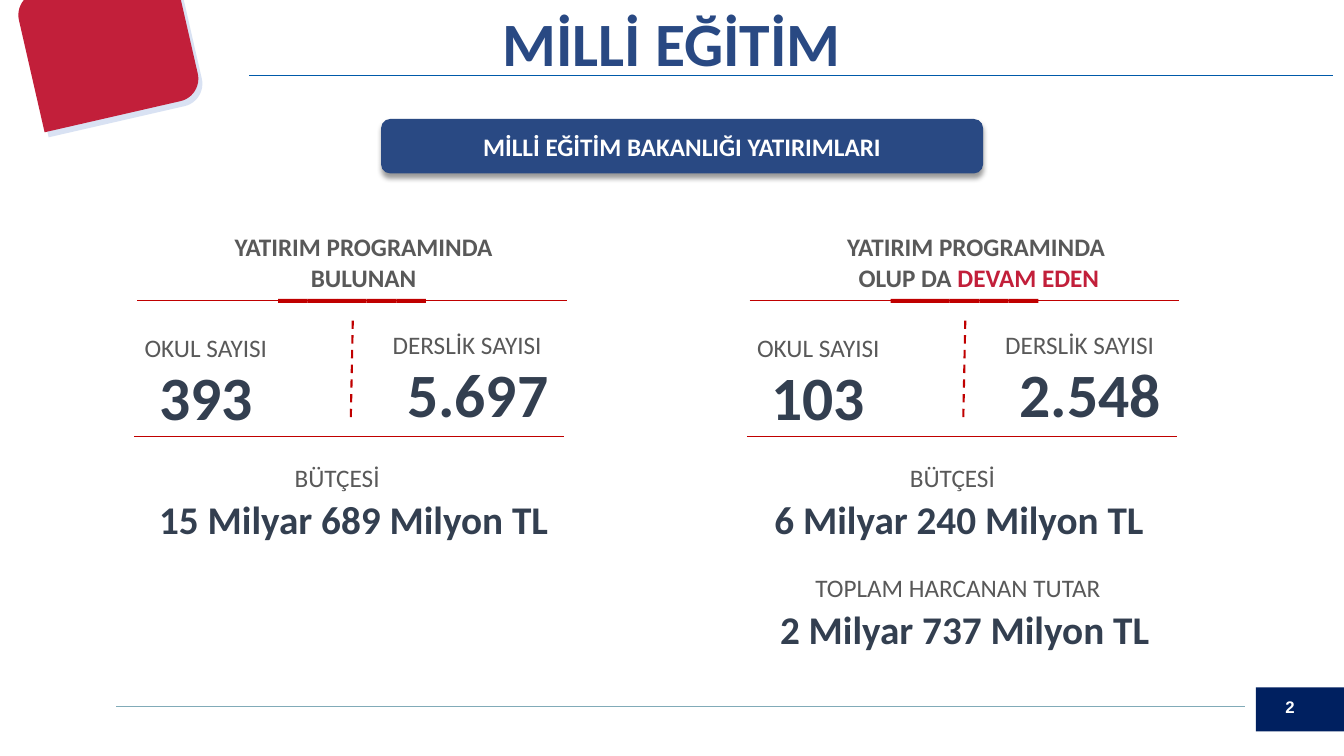
"""Build the national education investment slide."""
from dataclasses import dataclass

from lxml.etree import SubElement
from pptx import Presentation
from pptx.dml.color import RGBColor
from pptx.enum.dml import MSO_LINE
from pptx.enum.shapes import MSO_CONNECTOR, MSO_SHAPE
from pptx.enum.text import MSO_ANCHOR, PP_ALIGN
from pptx.oxml.ns import qn
from pptx.util import Pt

TITLE = "MİLLİ EĞİTİM"
BANNER = "MİLLİ EĞİTİM BAKANLIĞI YATIRIMLARI"
PAGE_NUMBER = "2"
PROGRAMS = [
    {
        "heading": ["YATIRIM PROGRAMINDA ", "BULUNAN "],
        "accent": "",
        "schools": ("OKUL SAYISI", "393"),
        "classrooms": ("DERSLİK SAYISI", "5.697"),
        "amounts": [("BÜTÇESİ", "15 Milyar 689 Milyon TL", 0)],
    },
    {
        "heading": ["YATIRIM PROGRAMINDA ", "OLUP DA "],
        "accent": "DEVAM EDEN",
        "schools": ("OKUL SAYISI", "103"),
        "classrooms": ("DERSLİK SAYISI", "2.548"),
        "amounts": [
            ("BÜTÇESİ", "6 Milyar 240 Milyon TL", 2),
            ("TOPLAM HARCANAN TUTAR", "2 Milyar 737 Milyon TL", 6),
        ],
    },
]


@dataclass(frozen=True)
class Theme:
    """Colours, fonts and type sizes."""
    blue: str = "294983"
    navy: str = "002060"
    crimson: str = "C21F3A"
    red: str = "C00000"
    halo: str = "4472C4"
    title_rule: str = "005AAA"
    footer_rule: str = "81ABB8"
    gray: str = "595959"
    slate: str = "333F50"
    white: str = "FFFFFF"
    body: str = "Calibri"
    footer: str = "Arial"
    huge: int = 44
    large: int = 28
    label: int = 18
    small: int = 12


THEME = Theme()
PROGRAM_STEP = 437.5
AMOUNT_STEP = 78.5
BAR_COUNT, BAR_STEP = 5, 21.1

deck = Presentation()
deck.slide_width, deck.slide_height = Pt(960), Pt(540)
page = deck.slides.add_slide(deck.slide_layouts[6])


def rgb(color):
    return RGBColor.from_string(color)


def write(frame, lines, size, color, bold=False, align=PP_ALIGN.CENTER, font=THEME.body):
    frame.word_wrap = True
    for index, line in enumerate(lines):
        para = frame.paragraphs[0] if index == 0 else frame.add_paragraph()
        para.alignment = align
        para.font.name, para.font.size, para.font.bold = font, Pt(size), bold
        para.font.color.rgb = rgb(color)
        para.add_run().text = line


def add_text(left, top, width, height, lines, size, color, **style):
    box = page.shapes.add_textbox(Pt(left), Pt(top), Pt(width), Pt(height))
    write(box.text_frame, lines, size, color, **style)
    return box


def add_block(kind, left, top, width, height, color, rotation=0):
    block = page.shapes.add_shape(kind, Pt(left), Pt(top), Pt(width), Pt(height))
    block.shadow.inherit = False
    block.fill.solid()
    block.fill.fore_color.rgb = rgb(color)
    block.line.fill.background()
    block.rotation = rotation
    return block


def add_line(start, end, color, weight):
    line = page.shapes.add_connector(MSO_CONNECTOR.STRAIGHT, *map(Pt, start + end))
    line.line.color.rgb = rgb(color)
    line.line.width = Pt(weight)
    SubElement(line._element.spPr, qn("a:effectLst"))
    return line


def add_alpha(color_element, percent):
    SubElement(color_element, qn("a:alpha"), val=str(percent * 1000))


def add_frame():
    add_line((83, 504.7), (889, 504.7), THEME.footer_rule, 0.75)
    add_block(MSO_SHAPE.RECTANGLE, 897, 491, 63, 31.5, THEME.navy)
    add_text(911, 494, 45, 22, [PAGE_NUMBER], THEME.small, THEME.white,
             bold=True, align=PP_ALIGN.LEFT, font=THEME.footer)
    add_line((178, 54), (952, 54), THEME.title_rule, 1)
    tile = MSO_SHAPE.ROUND_2_DIAG_RECTANGLE
    halo = add_block(tile, 22.3, -12.2, 116, 98.6, THEME.halo, 347.1)
    add_alpha(halo._element.spPr.find(".//" + qn("a:srgbClr")), 20)
    add_block(tile, 19.4, -15.8, 116, 98.6, THEME.crimson, 347.1)
    add_text(93.6, 0, 772.6, 60.5, [TITLE], THEME.huge, THEME.blue, bold=True)


def add_banner():
    banner = add_block(MSO_SHAPE.ROUNDED_RECTANGLE, 272.2, 85, 430, 38.9, THEME.blue)
    banner.text_frame.vertical_anchor = MSO_ANCHOR.MIDDLE
    write(banner.text_frame, [BANNER], THEME.label, THEME.white, bold=True)
    effects = banner._element.spPr.find(qn("a:effectLst"))
    shadow = SubElement(effects, qn("a:outerShdw"), blurRad=str(Pt(4)), dist=str(Pt(3)),
                        dir="5400000", algn="t", rotWithShape="0")
    add_alpha(SubElement(shadow, qn("a:srgbClr"), val="000000"), 40)


def add_count(left, top, label, label_width, value, value_left):
    add_text(left, top, label_width, 29, [label], THEME.label, THEME.gray)
    add_text(value_left, top + 19, 120, 60.5, [value], THEME.huge, THEME.slate,
             bold=True, align=PP_ALIGN.LEFT)


def add_program(program, x):
    for index in range(BAR_COUNT):
        add_block(MSO_SHAPE.RECTANGLE, x + 198.7 + index * BAR_STEP, 213.6, 21.1, 2.9, THEME.red)
    add_line((x + 98, 214.6), (x + 405, 214.6), THEME.red, 0.5)
    add_line((x + 96, 311.8), (x + 403, 311.8), THEME.red, 0.5)
    divider = add_line((x + 250.6, 298), (x + 252, 229), THEME.red, 1.5)
    divider.line.dash_style = MSO_LINE.DASH

    heading = add_text(x + 74.2, 162, 375, 51, program["heading"],
                       THEME.label, THEME.gray, bold=True)
    if program["accent"]:
        span = heading.text_frame.paragraphs[-1].add_run()
        span.text = program["accent"]
        span.font.color.rgb = rgb(THEME.crimson)

    label, value = program["schools"]
    add_count(x + 92, 234, label, 110, value, x + 106.6)
    label, value = program["classrooms"]
    add_count(x + 268.7, 232, label, 130, value, x + 283.7)

    for index, (label, amount, indent) in enumerate(program["amounts"]):
        left, top = x + indent, 327 + index * AMOUNT_STEP
        add_text(left + 120.8, top, 240, 29, [label], THEME.label, THEME.gray)
        add_text(left + 106.6, top + 23, 300, 41, [amount], THEME.large, THEME.slate,
                 bold=True, align=PP_ALIGN.LEFT)


add_frame()
add_banner()
for position, program in enumerate(PROGRAMS):
    add_program(program, position * PROGRAM_STEP)
deck.save("out.pptx")
